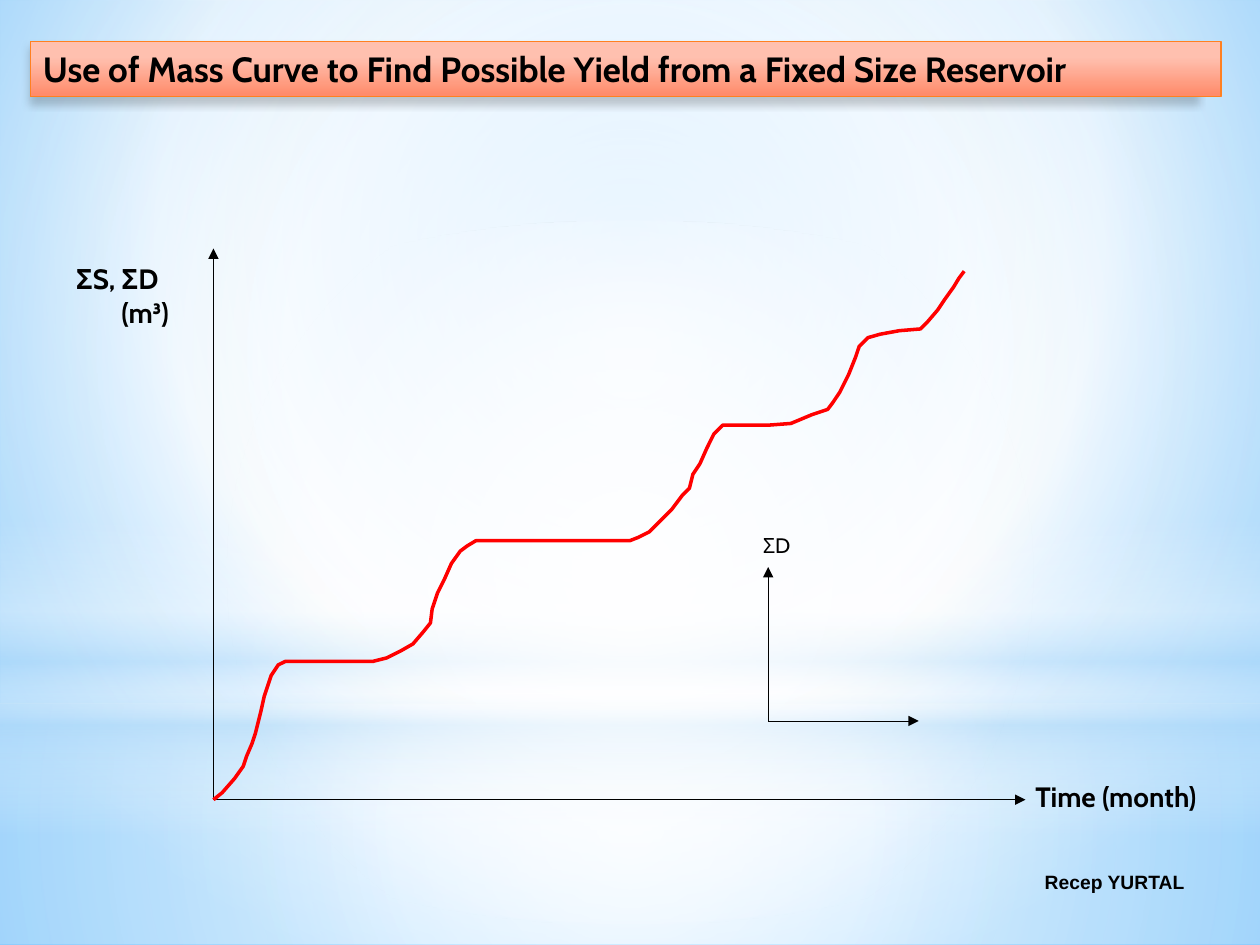
from lxml import etree
from pptx import Presentation
from pptx import util as u
from pptx.dml.color import RGBColor
from pptx.enum import shapes as kinds, text as layout
from pptx.oxml import ns

Pt = u.Pt
BLACK = "000000"
FLOW_CURVE = [
    (0, 0), (5, 4), (12, 12), (17, 19), (19, 25), (22, 32), (24, 38), (27, 50),
    (29, 59), (31, 65), (33, 71), (37, 77), (41, 79), (91, 79), (99, 81),
    (107, 85), (114, 89), (120, 96), (124, 101), (125, 109), (128, 118),
    (132, 126), (136, 135), (141, 142), (145, 145), (150, 148), (238, 148),
    (243, 150), (249, 153), (255, 159), (262, 166), (268, 174), (272, 178),
    (274, 186), (278, 192), (282, 201), (286, 209), (291, 214), (317, 214),
    (330, 215), (342, 220), (351, 223), (354, 227), (358, 233), (363, 243),
    (367, 253), (369, 259), (374, 264), (381, 266), (392, 268), (404, 269),
    (408, 273), (414, 280), (418, 286), (423, 293), (426, 298), (429, 302),
]


def rgb(value):
    """Return the colour for a hex string."""
    return RGBColor.from_string(value)


def add_node(parent, tag, **attributes):
    """Append a DrawingML element with the given attributes."""
    node = etree.SubElement(parent, ns.qn(f"a:{tag}"))
    for name, value in attributes.items():
        node.set(name, str(value))
    return node


def add_colour(parent, value, opacity=100):
    """Append a colour with an opacity in percent."""
    colour = add_node(parent, "srgbClr", val=value)
    if opacity < 100:
        add_node(colour, "alpha", val=opacity * 1000)


def paint_gradient(fill, root, stops, centre=None):
    """Fill with a vertical gradient, or a circular one around a centre."""
    fill.gradient()
    gradient = root.find(".//" + ns.qn("a:gradFill"))
    for child in list(gradient):
        gradient.remove(child)
    stop_list = add_node(gradient, "gsLst")
    for position, *colour in stops:
        add_colour(add_node(stop_list, "gs", pos=position * 1000), *colour)
    if centre:
        circle = add_node(gradient, "path", path="circle")
        sides = {side: share * 1000 for side, share in zip("ltrb", centre)}
        add_node(circle, "fillToRect", **sides)
    else:
        add_node(gradient, "lin", ang=5400000, scaled=0)


def add_span(para, words, size, font="Cabin", bold=True):
    """Add one formatted run to a paragraph."""
    span = para.add_run()
    span.text = words
    span.font.size = Pt(size)
    span.font.name = font
    span.font.bold = bold
    span.font.color.rgb = rgb(BLACK)


def add_backdrop(page, width, height):
    """Paint the background and its soft light bands."""
    paint_gradient(page.background.fill, page.background._cSld,
                   [(0, "9ED5FF"), (60, "FFFFFF"), (100, "5BB9FF")],
                   (20, 10, 20, 60))
    middle = (50, 50, 50, 50)
    horizon = 402
    rectangle, oval = kinds.MSO_SHAPE.RECTANGLE, kinds.MSO_SHAPE.OVAL
    bands = [
        (rectangle, horizon, height - horizon, middle,
         [(0, "FFFFFF", 91), (37, "FFFFFF", 76), (100, "B4DCFA", 79)]),
        (rectangle, 0, horizon, middle,
         [(0, "FFFFFF", 89), (48, "FFFFFF", 62), (100, "B4DCFA", 79)]),
        (rectangle, 297, 180, None,
         [(0, "FFFFFF", 0), (29, "FFFFFF", 30), (45, "B4DCFA", 40),
          (55, "FFFFFF", 26), (65, "B4DCFA", 60), (100, "FFFFFF", 0)]),
        (oval, 126, horizon, middle, [(0, "FFFFFF"), (56, "FFFFFF", 0)]),
    ]
    for kind, top, depth, centre, stops in bands:
        band = page.shapes.add_shape(kind, 0, Pt(top), Pt(width), Pt(depth))
        band.shadow.inherit = False
        band.line.fill.background()
        paint_gradient(band.fill, band._element.spPr, stops, centre)


def add_title(page, left, top, width, height):
    """Format the title placeholder as a shaded bar in front."""
    title = page.shapes.title
    title.left, title.top = Pt(left), Pt(top)
    title.width, title.height = Pt(width), Pt(height)
    properties = title._element.spPr
    paint_gradient(title.fill, properties, [(28, "FFC0AF"), (100, "FF8968")])
    title.line.color.rgb = rgb("FF8021")
    title.line.width = Pt(0.75)
    shadow = add_node(add_node(properties, "effectLst"), "outerShdw",
                      blurRad=Pt(5), dist=Pt(4), dir=5400000, sx=98000,
                      sy=98000, algn="ctr", rotWithShape=0)
    add_colour(shadow, BLACK, 20)
    frame = title.text_frame
    frame.word_wrap = True
    frame.auto_size = layout.MSO_AUTO_SIZE.NONE
    frame.vertical_anchor = layout.MSO_ANCHOR.TOP
    para = frame.paragraphs[0]
    para.alignment = layout.PP_ALIGN.LEFT
    add_span(para, "Use of Mass Curve to Find Possible Yield from a Fixed Size "
                   "Reservoir", 20)
    page.shapes._spTree.append(title._element)


def add_label(page, left, top, width, height, lines, size=16, bold=True):
    """Add an unfilled label from (words, alignment) lines."""
    label = page.shapes.add_shape(kinds.MSO_SHAPE.ROUNDED_RECTANGLE, Pt(left),
                                  Pt(top), Pt(width), Pt(height))
    label.shadow.inherit = False
    label.fill.background()
    label.line.fill.background()
    frame = label.text_frame
    frame.word_wrap = True
    frame.vertical_anchor = layout.MSO_ANCHOR.TOP
    frame.margin_left = frame.margin_right = Pt(0.72)
    frame.margin_top = frame.margin_bottom = Pt(0.72)
    for index, (words, alignment) in enumerate(lines):
        para = frame.add_paragraph() if index else frame.paragraphs[0]
        para.alignment = alignment
        add_span(para, words, size, bold=bold)


def add_axes(page, left, top, width, height):
    """Draw two arrowed axes from the lower left corner of a box."""
    base = top + height
    for end_x, end_y in [(left, top), (left + width, base)]:
        axis = page.shapes.add_connector(kinds.MSO_CONNECTOR.STRAIGHT, Pt(left),
                                         Pt(base), Pt(end_x), Pt(end_y))
        axis.line.color.rgb = rgb(BLACK)
        axis.line.width = Pt(0.25)
        add_node(axis.line._get_or_add_ln(), "tailEnd", type="triangle")
        add_node(axis._element.spPr, "effectLst")


def add_mass_curve(page, left, base):
    """Draw the cumulative flow curve from its origin."""
    points = [(Pt(left + x), Pt(base - y)) for x, y in FLOW_CURVE]
    builder = page.shapes.build_freeform(*points[0])
    builder.add_line_segments(points[1:], close=False)
    curve = builder.convert_to_shape()
    curve.shadow.inherit = False
    curve.fill.background()
    curve.line.color.rgb = rgb("FF0000")
    curve.line.width = Pt(2)


def add_diagram(page, left, top, width, height):
    """Draw the mass curve, its axes, the demand inset and the labels."""
    base = top + height
    start, centre = layout.PP_ALIGN.LEFT, layout.PP_ALIGN.CENTER
    add_label(page, left + width + 3, base - 14, 109, 40,
              [("Time (month)", start)])
    add_axes(page, left, top, width, height)
    add_mass_curve(page, left, base)
    add_axes(page, left + 317, top + 182, 86, 88)
    add_label(page, left - 82, top + 4, 86, 59,
              [("ΣS, ΣD", start), ("(m³)", centre)])
    add_label(page, left + 312, top + 160, 28, 35, [("ΣD", start)], 12, False)


def add_author(page, left, top, width, height):
    """Add the author's name at the foot of the page."""
    box = page.shapes.add_textbox(Pt(left), Pt(top), Pt(width), Pt(height))
    frame = box.text_frame
    frame.word_wrap = True
    frame.vertical_anchor = layout.MSO_ANCHOR.MIDDLE
    frame.paragraphs[0].alignment = layout.PP_ALIGN.RIGHT
    add_span(frame.paragraphs[0], "Recep YURTAL", 11, "Arial")


def main():
    """Build and save the slide."""
    deck = Presentation()
    deck.slide_width, deck.slide_height = Pt(720), Pt(540)
    page = deck.slides.add_slide(deck.slide_layouts[5])
    add_backdrop(page, 720, 540)
    add_author(page, 486, 489.6, 198, 28.8)
    add_diagram(page, 122, 142, 464, 315)
    add_title(page, 17.3, 23.8, 680.4, 31.5)
    deck.save("out.pptx")


if __name__ == "__main__":
    main()
